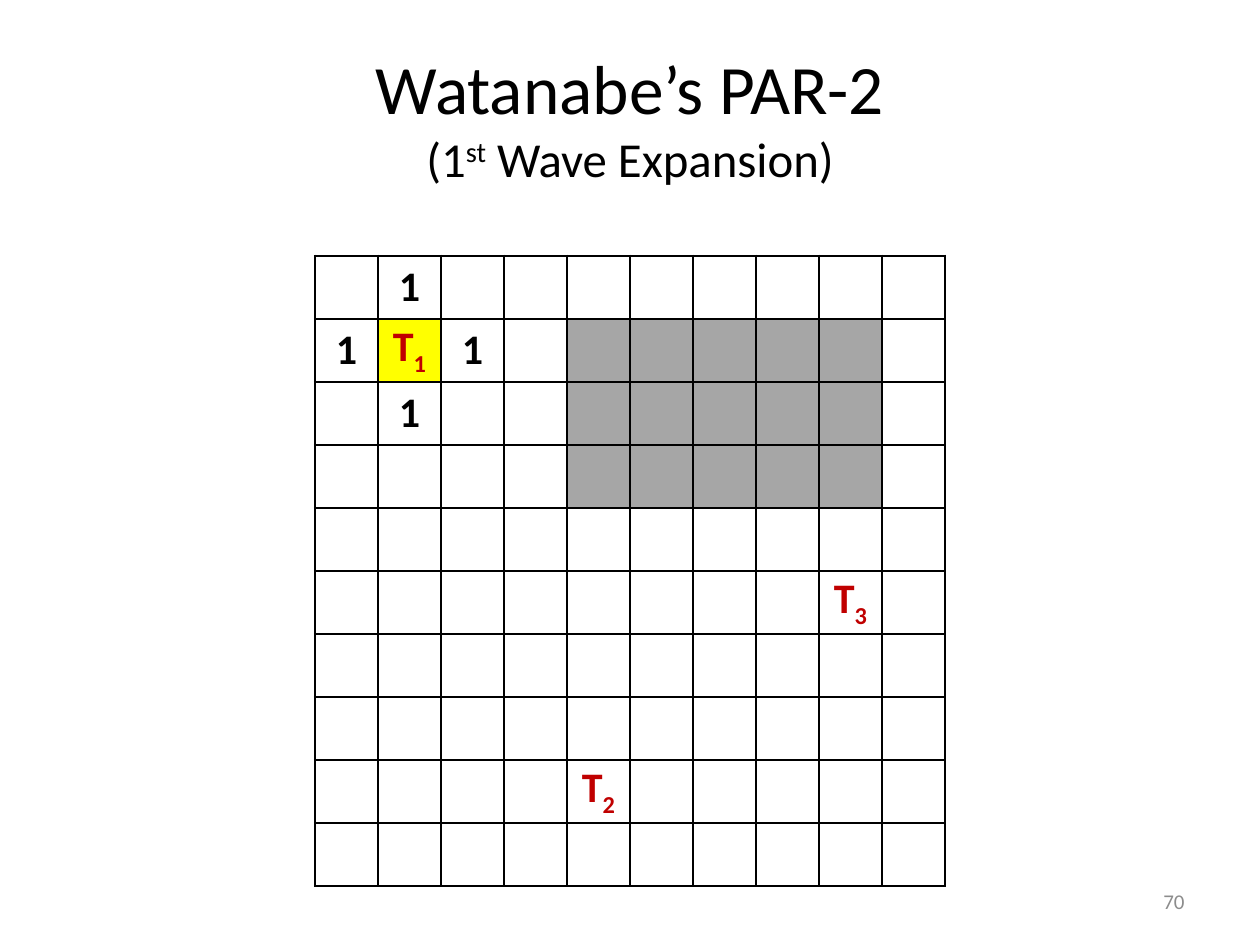
from dataclasses import dataclass

from lxml.etree import SubElement
from pptx import Presentation
from pptx.dml.color import RGBColor
from pptx.enum.text import MSO_ANCHOR as Anchor, MSO_AUTO_SIZE as AutoSize, PP_ALIGN as Align
from pptx.oxml.ns import qn
from pptx.util import Inches, Pt


@dataclass(frozen=True)
class Theme:
    font: str = "Calibri"
    ink: str = "000000"
    terminal: str = "C00000"
    muted: str = "8C8C8C"
    free: str = "FFFFFF"
    blocked: str = "A6A6A6"
    source: str = "FFFF00"
    title_size: float = 39.6
    subtitle_size: float = 27.9
    cell_size: float = 24
    number_size: float = 12
    border: float = 1.5


THEME = Theme()
GRID_SIZE = 10
CELL = 0.5

# Grid content, keyed by (row, column)
WAVE = {(0, 1): "1", (1, 0): "1", (1, 2): "1", (2, 1): "1"}
TERMINALS = {(1, 1): "1", (5, 8): "3", (8, 4): "2"}
SOURCE = (1, 1)
OBSTACLE = {(row, col) for row in range(1, 4) for col in range(4, 9)}


def add_text(paragraph, text, size, color=THEME.ink, bold=False, baseline=0):
    """Add one formatted run; baseline is a percentage up or down."""
    run = paragraph.add_run()
    run.text = text
    run.font.name = THEME.font
    run.font.size = Pt(size)
    run.font.bold = bold
    run.font.color.rgb = RGBColor.from_string(color)
    if baseline:
        run.font._element.set("baseline", str(baseline * 1000))


def place(shape, left, top, width, height):
    shape.left, shape.top = Inches(left), Inches(top)
    shape.width, shape.height = Inches(width), Inches(height)


def add_title(slide):
    title = slide.shapes.title
    place(title, 0.5, 0.3, 9, 1.25)
    frame = title.text_frame
    frame.auto_size = AutoSize.NONE
    frame.vertical_anchor = Anchor.MIDDLE
    heading = frame.paragraphs[0]
    heading.alignment = Align.CENTER
    add_text(heading, "Watanabe’s PAR-2", THEME.title_size)
    heading.add_line_break()
    # The break takes the size of its line, so the line is no taller
    line_break = heading._p.find(qn("a:br"))
    SubElement(line_break, qn("a:rPr"), sz=str(round(THEME.title_size * 100)))
    add_text(heading, "(1", THEME.subtitle_size)
    add_text(heading, "st", THEME.subtitle_size, baseline=30)
    add_text(heading, " Wave Expansion)", THEME.subtitle_size)


def set_borders(cell):
    properties = cell._tc.get_or_add_tcPr()
    for index, side in enumerate(("lnL", "lnR", "lnT", "lnB")):
        line = SubElement(properties, qn(f"a:{side}"), w=str(Pt(THEME.border)))
        fill = SubElement(line, qn("a:solidFill"))
        SubElement(fill, qn("a:srgbClr"), val=THEME.ink)
        properties.insert(index, line)  # borders come before the fill


def cell_color(position):
    if position == SOURCE:
        return THEME.source
    return THEME.blocked if position in OBSTACLE else THEME.free


def format_cell(cell, position):
    cell.fill.solid()
    cell.fill.fore_color.rgb = RGBColor.from_string(cell_color(position))
    set_borders(cell)
    cell.margin_left = cell.margin_right = cell.margin_top = cell.margin_bottom = 0
    cell.vertical_anchor = Anchor.MIDDLE
    label = cell.text_frame.paragraphs[0]
    label.alignment = Align.CENTER
    if position in WAVE:
        add_text(label, WAVE[position], THEME.cell_size, bold=True)
    elif position in TERMINALS:
        style = dict(size=THEME.cell_size, color=THEME.terminal, bold=True)
        add_text(label, "T", **style)
        add_text(label, TERMINALS[position], baseline=-25, **style)


def add_routing_grid(slide, left, top):
    side = Inches(GRID_SIZE * CELL)
    grid = slide.shapes.add_table(
        GRID_SIZE, GRID_SIZE, Inches(left), Inches(top), side, side
    ).table
    grid.first_row = grid.horz_banding = False
    for track in (*grid.columns, *grid.rows):
        if hasattr(track, "width"):
            track.width = Inches(CELL)
        else:
            track.height = Inches(CELL)
    for row in range(GRID_SIZE):
        for col in range(GRID_SIZE):
            format_cell(grid.cell(row, col), (row, col))


def add_page_number(slide, number):
    box = slide.shapes.add_textbox(Inches(7.17), Inches(6.95), Inches(2.33), Inches(0.4))
    frame = box.text_frame
    frame.word_wrap = True
    frame.vertical_anchor = Anchor.MIDDLE
    paragraph = frame.paragraphs[0]
    paragraph.alignment = Align.RIGHT
    add_text(paragraph, number, THEME.number_size, color=THEME.muted)


def main():
    deck = Presentation()
    deck.slide_width, deck.slide_height = Inches(10), Inches(7.5)
    slide = deck.slides.add_slide(deck.slide_layouts.get_by_name("Title Only"))
    add_title(slide)
    add_routing_grid(slide, 2.5, 2.03)
    add_page_number(slide, "70")
    deck.save("out.pptx")


if __name__ == "__main__":
    main()
